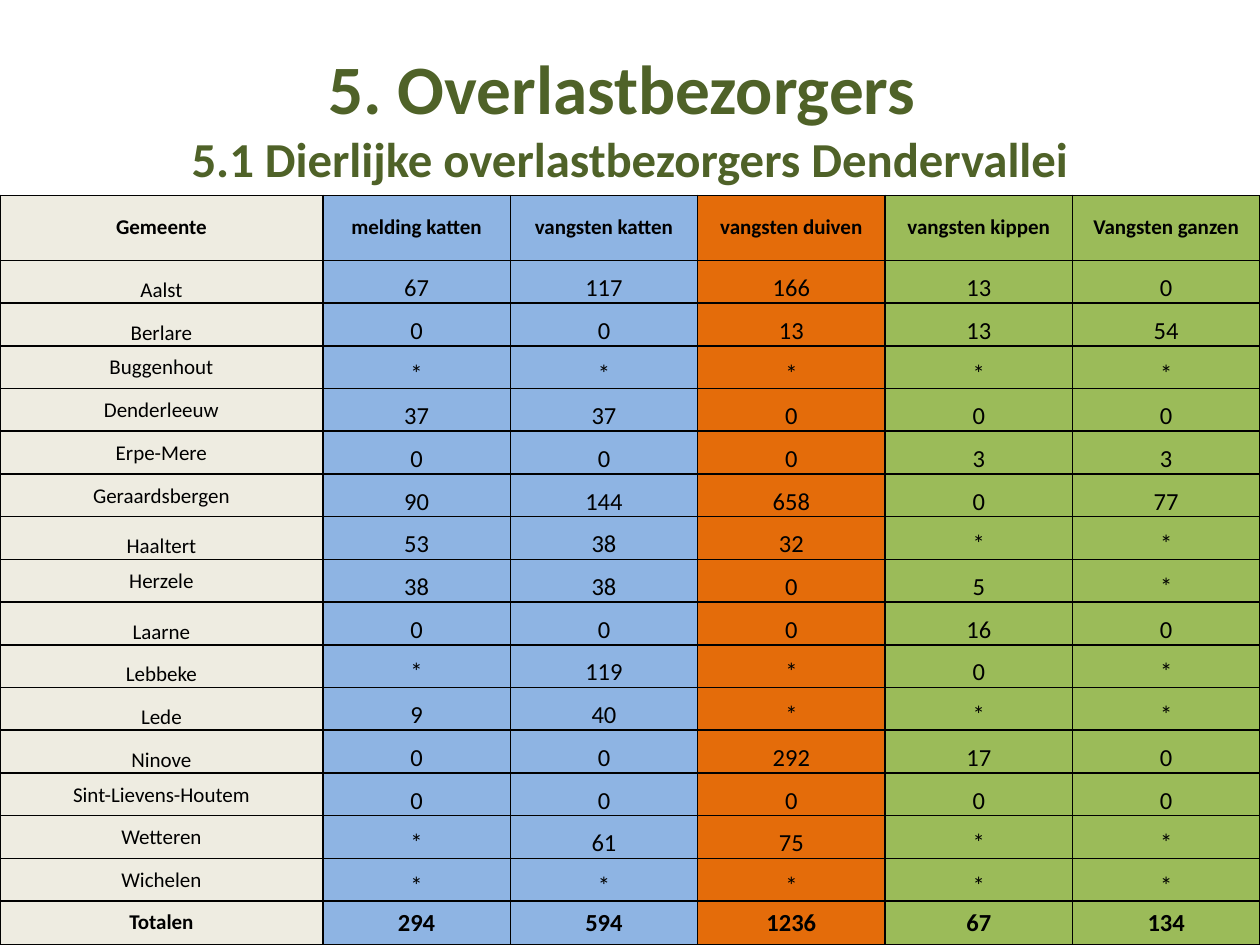
from typing import NamedTuple

from lxml.etree import SubElement
from pptx import Presentation
from pptx.dml.color import RGBColor
from pptx.enum.text import MSO_ANCHOR, PP_ALIGN
from pptx.oxml.ns import qn
from pptx.util import Pt

FONT = "Calibri"
BLACK = RGBColor(0x00, 0x00, 0x00)
GREEN = RGBColor(0x4F, 0x62, 0x28)
CREAM = RGBColor(0xEE, 0xEC, 0xE1)
BLUE = RGBColor(0x8E, 0xB4, 0xE3)
ORANGE = RGBColor(0xE4, 0x6C, 0x0A)
LIME = RGBColor(0x9B, 0xBB, 0x59)

MID, LOW = MSO_ANCHOR.MIDDLE, MSO_ANCHOR.BOTTOM
WIDE, HIGH = 720, 540
TOP = 111.6
NAME_W, HEAD_H, ROW_H = 184.5, 37.2, 24.42


class Col(NamedTuple):
    head: str
    fill: RGBColor


class Town(NamedTuple):
    name: str
    counts: str
    anchor: MSO_ANCHOR = LOW


class Style(NamedTuple):
    size: float
    bold: bool
    anchor: MSO_ANCHOR
    side: float = 0.7
    top: float = 0.7


COLS = [
    Col("Gemeente", CREAM),
    Col("melding katten", BLUE),
    Col("vangsten katten", BLUE),
    Col("vangsten duiven", ORANGE),
    Col("vangsten kippen", LIME),
    Col("Vangsten ganzen", LIME),
]
TOWNS = [
    Town("Aalst", "67 117 166 13 0"),
    Town("Berlare", "0 0 13 13 54"),
    Town("Buggenhout", "* * * * *", MID),
    Town("Denderleeuw", "37 37 0 0 0", MID),
    Town("Erpe-Mere", "0 0 0 3 3", MID),
    Town("Geraardsbergen", "90 144 658 0 77", MID),
    Town("Haaltert", "53 38 32 * *"),
    Town("Herzele", "38 38 0 5 *", MID),
    Town("Laarne", "0 0 0 16 0"),
    Town("Lebbeke", "* 119 * 0 *"),
    Town("Lede", "9 40 * * *"),
    Town("Ninove", "0 0 292 17 0"),
    Town("Sint-Lievens-Houtem", "0 0 0 0 0", MID),
    Town("Wetteren", "* 61 75 * *", MID),
    Town("Wichelen", "* * * * *", MID),
]
TOTALS = Town("Totalen", "294 594 1236 67 134", MID)

HEAD = Style(12, True, MID, 2.2, 0)
COUNT = Style(14, False, LOW)
TOTAL = Style(14, True, MID)


def set_font(run, size: float, bold: bool, color: RGBColor) -> None:
    font = run.font
    font.name, font.size, font.bold = FONT, Pt(size), bold
    font.color.rgb = color


def add_title(slide) -> None:
    box = slide.shapes.add_textbox(Pt(36), Pt(21.6), Pt(648), Pt(90))
    frame = box.text_frame
    frame.word_wrap = True
    frame.vertical_anchor = MID
    frame.text = "5. Overlastbezorgers \v5.1 Dierlijke overlastbezorgers Dendervallei"
    line = frame.paragraphs[0]
    line.alignment = PP_ALIGN.CENTER
    for run, size in zip(line.runs, (39.6, 27.9)):
        set_font(run, size, True, GREEN)


def add_edges(cell) -> None:
    """Draw a thin black line on all four sides of the cell."""
    props = cell._tc.get_or_add_tcPr()
    for side in ("a:lnL", "a:lnR", "a:lnT", "a:lnB"):
        edge = SubElement(props, qn(side), w=str(Pt(1)))
        fill = SubElement(edge, qn("a:solidFill"))
        SubElement(fill, qn("a:srgbClr"), val=str(BLACK))


def fill_cell(cell, text: str, fill: RGBColor, style: Style) -> None:
    add_edges(cell)
    cell.fill.solid()
    cell.fill.fore_color.rgb = fill
    cell.vertical_anchor = style.anchor
    cell.margin_left = cell.margin_right = Pt(style.side)
    cell.margin_top, cell.margin_bottom = Pt(style.top), Pt(0)
    cell.text_frame.text = text
    line = cell.text_frame.paragraphs[0]
    line.alignment = PP_ALIGN.CENTER
    set_font(line.runs[0], style.size, style.bold, BLACK)


def fill_row(table, row: int, texts: list[str], first: Style, rest: Style) -> None:
    for i, (text, col) in enumerate(zip(texts, COLS)):
        fill_cell(table.cell(row, i), text, col.fill, rest if i else first)


def add_counts(slide) -> None:
    last = len(TOWNS) + 1
    frame = slide.shapes.add_table(
        last + 1, len(COLS), Pt(0), Pt(TOP), Pt(WIDE), Pt(HIGH - TOP)
    )
    table = frame.table
    table.first_row = table.horz_banding = False
    for i, col in enumerate(table.columns):
        col.width = Pt((WIDE - NAME_W) / (len(COLS) - 1) if i else NAME_W)
    for row in table.rows:
        row.height = Pt(ROW_H)
    table.rows[0].height = Pt(HEAD_H)
    table.rows[last].height = Pt(HIGH - TOP - HEAD_H - len(TOWNS) * ROW_H)

    fill_row(table, 0, [col.head for col in COLS], HEAD, HEAD)
    for i, town in enumerate(TOWNS, 1):
        name = Style(12, False, town.anchor)
        fill_row(table, i, [town.name, *town.counts.split()], name, COUNT)
    fill_row(table, last, [TOTALS.name, *TOTALS.counts.split()], HEAD, TOTAL)


def main() -> None:
    deck = Presentation()
    deck.slide_width, deck.slide_height = Pt(WIDE), Pt(HIGH)
    slide = deck.slides.add_slide(deck.slide_layouts[6])
    add_title(slide)
    add_counts(slide)
    deck.save("out.pptx")


if __name__ == "__main__":
    main()
